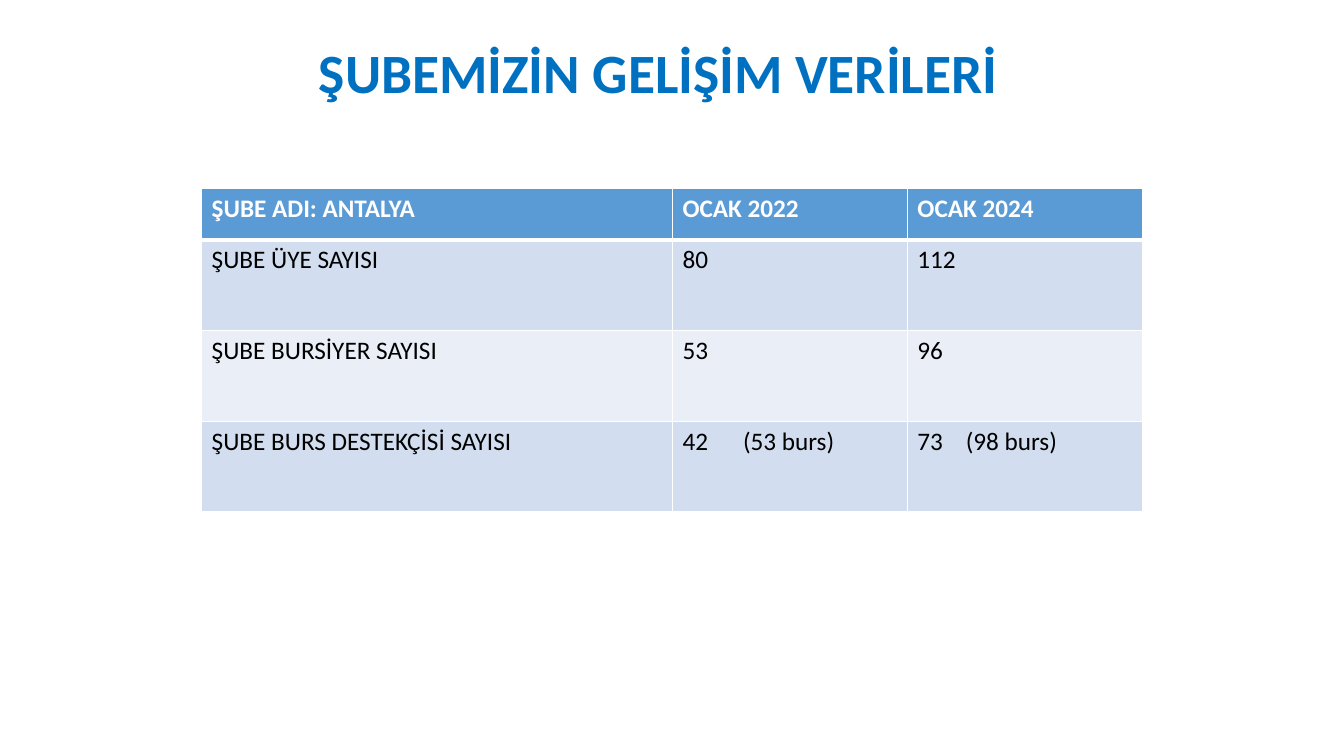
from dataclasses import dataclass

import lxml.etree
import pptx
import pptx.dml.color
import pptx.enum.text
import pptx.oxml.ns
import pptx.util

PX = 9144  # EMU per px, 100 px to the inch


@dataclass(frozen=True)
class Theme:
    font: str = "Calibri"
    title: str = "0070C0"
    header: str = "5B9BD5"
    bands: tuple = ("D2DEEF", "EAEFF7")
    light: str = "FFFFFF"
    dark: str = "000000"
    title_size: float = 39.6
    cell_size: float = 18
    thin: int = 1
    thick: int = 3


THEME = Theme()
COLUMN_WIDTHS = (467, 233, 233)
ROW_HEIGHTS = (51, 90, 90, 90)
TAB_STOPS = {1: 60, 2: 48}  # column: px from the left of its text
BRANCH_DATA = (
    ("ŞUBE ADI: ANTALYA", "OCAK 2022", "OCAK 2024"),
    ("ŞUBE ÜYE SAYISI", "80", "112"),
    ("ŞUBE BURSİYER SAYISI", "53", "96"),
    ("ŞUBE BURS DESTEKÇİSİ SAYISI", "42\t(53 burs)", "73\t(98 burs)"),
)


def px(length):
    return pptx.util.Emu(length * PX)


def rgb(value):
    return pptx.dml.color.RGBColor.from_string(value)


def set_values(target, values):
    for name, value in values.items():
        setattr(target, name, value)


def write(para, text, size, color, bold):
    span = para.add_run()
    span.text = text
    set_values(span.font, {"name": THEME.font, "size": pptx.util.Pt(size), "bold": bold})
    span.font.color.rgb = rgb(color)


def add_title(page, text):
    box = page.shapes.title
    set_values(box, {"left": px(92), "top": px(40), "width": px(1150), "height": px(126)})
    set_values(box.text_frame, {
        "word_wrap": True,
        "auto_size": pptx.enum.text.MSO_AUTO_SIZE.NONE,
        "vertical_anchor": pptx.enum.text.MSO_ANCHOR.TOP,
        "margin_right": px(38),
    })
    para = box.text_frame.paragraphs[0]
    set_values(para, {"alignment": pptx.enum.text.PP_ALIGN.CENTER, "line_spacing": 0.9})
    write(para, text, THEME.title_size, THEME.title, True)


def set_borders(cell, widths):
    """Draw the left, right, top and bottom borders, in that order."""
    properties = cell._tc.get_or_add_tcPr()
    for index, (side, width) in enumerate(zip("LRTB", widths)):
        line = lxml.etree.Element(pptx.oxml.ns.qn(f"a:ln{side}"), w=str(pptx.util.Pt(width)))
        fill = lxml.etree.SubElement(line, pptx.oxml.ns.qn("a:solidFill"))
        lxml.etree.SubElement(fill, pptx.oxml.ns.qn("a:srgbClr"), val=THEME.light)
        properties.insert(index, line)


def add_tab_stop(para, position):
    stops = lxml.etree.SubElement(para._p.get_or_add_pPr(), pptx.oxml.ns.qn("a:tabLst"))
    lxml.etree.SubElement(stops, pptx.oxml.ns.qn("a:tab"), pos=str(px(position)), algn="l")


def fill_cell(cell, text, row, column):
    header = row == 0
    cell.fill.solid()
    cell.fill.fore_color.rgb = rgb(THEME.header if header else THEME.bands[(row - 1) % 2])
    top = THEME.thick if row == 1 else THEME.thin
    bottom = THEME.thick if header else THEME.thin
    set_borders(cell, (THEME.thin, THEME.thin, top, bottom))
    para = cell.text_frame.paragraphs[0]
    if "\t" in text:
        add_tab_stop(para, TAB_STOPS[column])
    write(para, text, THEME.cell_size, THEME.light if header else THEME.dark, header)


def add_branch_table(page, left, top):
    table = page.shapes.add_table(
        len(ROW_HEIGHTS), len(COLUMN_WIDTHS), px(left), px(top),
        px(sum(COLUMN_WIDTHS)), px(sum(ROW_HEIGHTS))).table
    for column, width in zip(table.columns, COLUMN_WIDTHS):
        column.width = px(width)
    for row, height in zip(table.rows, ROW_HEIGHTS):
        row.height = px(height)
    for row, texts in enumerate(BRANCH_DATA):
        for column, text in enumerate(texts):
            fill_cell(table.cell(row, column), text, row, column)


def main():
    deck = pptx.Presentation()
    set_values(deck, {"slide_width": px(1333), "slide_height": px(750)})
    page = deck.slides.add_slide(deck.slide_layouts[5])  # title only

    # Heading
    add_title(page, "ŞUBEMİZİN GELİŞİM VERİLERİ")

    # Growth figures of the branch
    add_branch_table(page, 200, 187)

    deck.save("out.pptx")


if __name__ == "__main__":
    main()
